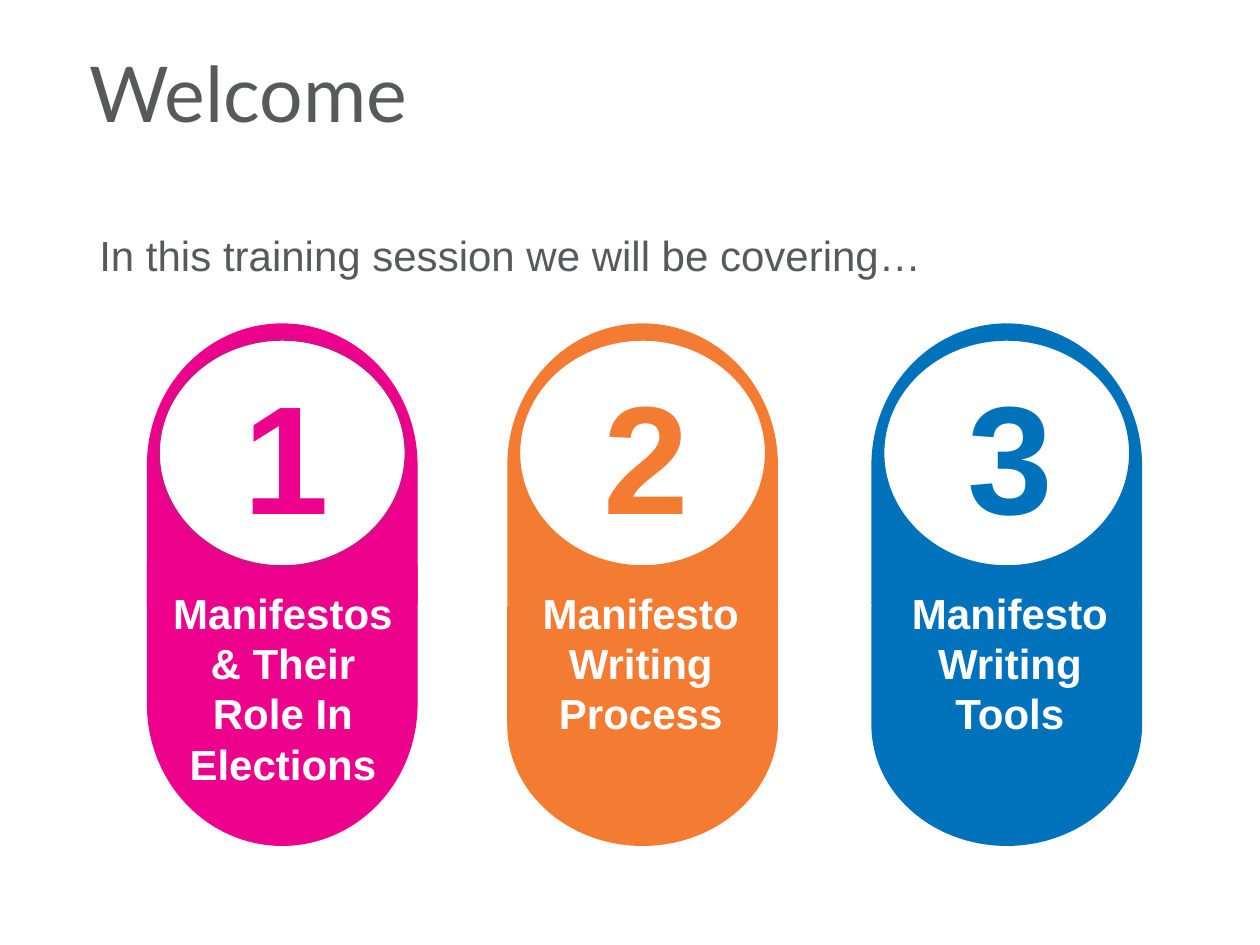
"""Build the welcome slide with its three numbered session topics."""
from pptx import Presentation, util as u
from pptx.dml.color import RGBColor
from pptx.enum import shapes, text

COLORS = {"pink": "EC008C", "rim": "D80E86", "orange": "F47C32",
          "blue": "0072BC", "gray": "58595B", "white": "FFFFFF"}
COLUMNS, ROWS = 100, 75
TOPICS = [
    {"center": 22.4, "color": "pink", "rim": "rim", "foot": 22.2,
     "label": 22.45, "height": 17.2, "lines": ["Manifestos & Their Role In Elections"]},
    {"center": 51, "color": "orange", "rim": "orange", "foot": 18.9,
     "label": 50.85, "height": 13.1, "lines": ["Manifesto Writing", "Process"]},
    {"center": 79.9, "color": "blue", "rim": "blue", "foot": 18.9,
     "label": 80.15, "height": 13.1, "lines": ["Manifesto Writing", "Tools"]},
]


def rgb(name):
    """Return the named color."""
    return RGBColor.from_string(COLORS[name])


def write(frame, lines, size=24, font="Arial", color="gray", bold=False, align="LEFT"):
    """Fill a text frame with one formatted paragraph per line."""
    for index, line in enumerate(lines):
        para = frame.paragraphs[0] if index == 0 else frame.add_paragraph()
        para.alignment = getattr(text.PP_ALIGN, align)
        span = para.add_run()
        span.text = line
        span.font.size, span.font.name, span.font.bold = u.Pt(size), font, bold
        span.font.color.rgb = rgb(color)


class Page:
    """Hold the grid, the line style and the current slide."""

    def __init__(self, deck, line=2):
        """Add a blank slide to the deck."""
        self.slide = deck.slides.add_slide(deck.slide_layouts[6])
        self.column, self.row = deck.slide_width / COLUMNS, deck.slide_height / ROWS
        self.line = u.Pt(line)

    def place(self, left, top, width, height):
        """Turn grid units into slide lengths."""
        return (round(left * self.column), round(top * self.row),
                round(width * self.column), round(height * self.row))

    def shape(self, kind, center, middle, width, height, fill, line, turn=0):
        """Draw a filled shape around its center."""
        item = self.slide.shapes.add_shape(
            kind, *self.place(center - width / 2, middle - height / 2, width, height))
        item.rotation = turn
        item.shadow.inherit = False
        item.fill.solid()
        item.fill.fore_color.rgb = rgb(fill)
        item.line.color.rgb = rgb(line)
        item.line.width = self.line

    def text(self, left, top, width, height, lines, wrap=True, grow=True,
             anchor="TOP", **style):
        """Add a text box."""
        box = self.slide.shapes.add_textbox(*self.place(left, top, width, height))
        frame = box.text_frame
        frame.word_wrap = wrap
        sizing = text.MSO_AUTO_SIZE
        frame.auto_size = sizing.SHAPE_TO_FIT_TEXT if grow else sizing.NONE
        frame.vertical_anchor = getattr(text.MSO_ANCHOR, anchor)
        write(frame, lines, **style)

    def topic(self, number, center, color, rim, foot, label, height, lines):
        """Draw a pill with a numbered disc and its label."""
        kinds = shapes.MSO_SHAPE
        top, bottom, cap, breadth = 25.8, 67, 22.2, 21.2
        for length, middle, turn in ((cap, top + cap / 2, 270),
                                     (foot, bottom - foot / 2, 90)):
            self.shape(kinds.FLOWCHART_DELAY, center, middle, length, breadth,
                       color, color, turn)
        self.shape(kinds.OVAL, center, 35.95, 19.7, 18.1, "white", rim)
        self.text(center - 10.1, 28.1, 20.8, 15.8, [str(number)], size=88,
                  color=color, bold=True, align="CENTER")
        self.text(label - 10.75, 46.1, 21.5, height, lines, color="white",
                  bold=True, align="CENTER")


def main():
    """Build and save the deck."""
    deck = Presentation()
    deck.slide_width, deck.slide_height = u.Inches(10), u.Inches(7.5)
    page = Page(deck)
    page.text(6.1, 2.9, 67, 8.7, ["Welcome"], grow=False, anchor="MIDDLE",
              size=44, font="Lato")
    page.text(6.9, 17.7, 67.9, 5, ["In this training session we will be covering…"],
              wrap=False)
    for number, topic in enumerate(TOPICS, 1):
        page.topic(number, **topic)
    deck.save("out.pptx")


if __name__ == "__main__":
    main()
